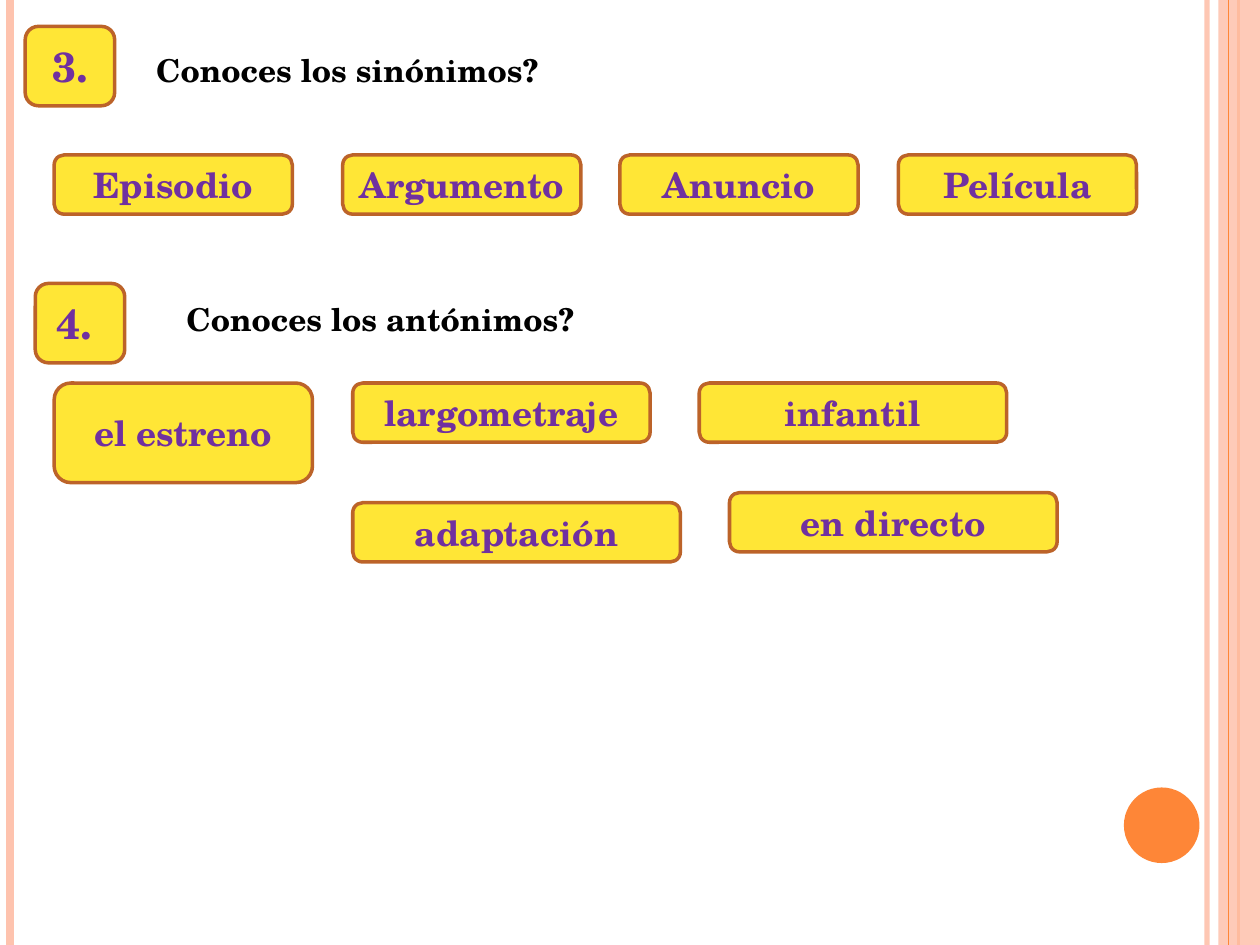
import pptx
import pptx.dml.color
import pptx.enum.shapes
import pptx.enum.text
import pptx.oxml
import pptx.oxml.ns
import pptx.util
from pptx.util import Inches

FONT = "TeX Gyre Schola"
YELLOW, BROWN, PURPLE = "FFE636", "BC6329", "7030A0"
PINK, ORANGE, BLACK = "FEC3AE", "FE8637", "000000"
SHAPES = pptx.enum.shapes.MSO_SHAPE
CARD_HEIGHT = 0.47


def color(hex_value):
    return pptx.dml.color.RGBColor.from_string(hex_value)


def set_opacity(element, percent):
    color_element = element.find(".//" + pptx.oxml.ns.qn("a:srgbClr"))
    alpha = pptx.oxml.parse_xml(
        f'<a:alpha {pptx.oxml.ns.nsdecls("a")} val="{percent * 1000}"/>')
    color_element.append(alpha)


def set_text(text_frame, text, size, hex_value, alignment):
    text_frame.text = text
    paragraph = text_frame.paragraphs[0]
    paragraph.alignment = alignment
    font = paragraph.runs[0].font
    font.name, font.size, font.bold = FONT, pptx.util.Pt(size), True
    font.color.rgb = color(hex_value)


def add_filled_shape(slide, kind, box, fill):
    shape = slide.shapes.add_shape(kind, *(Inches(length) for length in box))
    shape.shadow.inherit = False
    shape.fill.solid()
    shape.fill.fore_color.rgb = color(fill)
    shape.line.fill.background()
    return shape


def add_card(slide, box, text, size=20):
    card = add_filled_shape(slide, SHAPES.ROUNDED_RECTANGLE, box, YELLOW)
    card.line.color.rgb = color(BROWN)
    card.line.width = pptx.util.Pt(2)
    card.text_frame.vertical_anchor = pptx.enum.text.MSO_ANCHOR.MIDDLE
    set_text(card.text_frame, text, size, PURPLE, pptx.enum.text.PP_ALIGN.CENTER)


def add_stripe(slide, x, height, hex_value, width):
    stripe = slide.shapes.add_connector(
        pptx.enum.shapes.MSO_CONNECTOR.STRAIGHT,
        Inches(x), 0, Inches(x), Inches(height))
    stripe.line.color.rgb = color(hex_value)
    stripe.line.width = pptx.util.Pt(width)
    properties = stripe._element.spPr
    properties.append(pptx.oxml.parse_xml(
        f'<a:effectLst {pptx.oxml.ns.nsdecls("a")}/>'))
    return properties


def add_frame(slide, width, height):
    set_opacity(add_stripe(slide, width - 0.42, height, PINK, 3), 93)
    add_stripe(slide, 0.08, height, PINK, 4.5)
    add_stripe(slide, width - 0.17, height, ORANGE, 1.5)
    band = add_filled_shape(
        slide, SHAPES.RECTANGLE, (width - 0.33, 0, 0.33, height), PINK)
    set_opacity(band._element.spPr, 87)
    add_stripe(slide, width - 0.25, height, ORANGE, 0.75)
    add_filled_shape(
        slide, SHAPES.OVAL, (width - 1.08, height - 1.25, 0.6, 0.6), ORANGE)


def add_question(slide, left, top, number, heading, heading_box):
    add_card(slide, (left, top, 0.71, 0.63), number, 24)
    offset_x, offset_y, width, height = heading_box
    text_box = slide.shapes.add_textbox(
        Inches(left + offset_x), Inches(top + offset_y),
        Inches(width), Inches(height))
    text_box.text_frame.word_wrap = False
    text_box.text_frame.auto_size = pptx.enum.text.MSO_AUTO_SIZE.SHAPE_TO_FIT_TEXT
    set_text(text_box.text_frame, heading, 18, BLACK, pptx.enum.text.PP_ALIGN.LEFT)


def add_synonyms(slide, left, top):
    add_question(slide, left, top, "3.", "Conoces los sinónimos?",
                 (0.94, 0.15, 3.27, 0.4))
    words = {"Episodio": 0.23, "Argumento": 2.52, "Anuncio": 4.72, "Película": 6.93}
    for word, offset in words.items():
        add_card(slide, (left + offset, top + 1.02, 1.89, CARD_HEIGHT), word)


def add_antonyms(slide, left, top):
    add_question(slide, left, top, "4. ", "Conoces los antónimos?",
                 (1.1, 0.08, 3.31, 0.4))
    cards = [
        ("el estreno", 0.15, 0.79, 2.05, 0.79),
        ("largometraje", 2.52, 0.79, 2.36, CARD_HEIGHT),
        ("infantil", 5.27, 0.79, 2.44, CARD_HEIGHT),
        ("adaptación", 2.52, 1.74, 2.6, CARD_HEIGHT),
        ("en directo", 5.51, 1.66, 2.6, CARD_HEIGHT),
    ]
    for word, offset_x, offset_y, width, height in cards:
        add_card(slide, (left + offset_x, top + offset_y, width, height), word)


def main():
    width, height = 10, 7.5
    presentation = pptx.Presentation()
    presentation.slide_width = Inches(width)
    presentation.slide_height = Inches(height)
    slide = presentation.slides.add_slide(presentation.slide_layouts[6])
    add_frame(slide, width, height)
    add_synonyms(slide, 0.2, 0.21)
    add_antonyms(slide, 0.28, 2.25)
    presentation.save("out.pptx")


if __name__ == "__main__":
    main()
